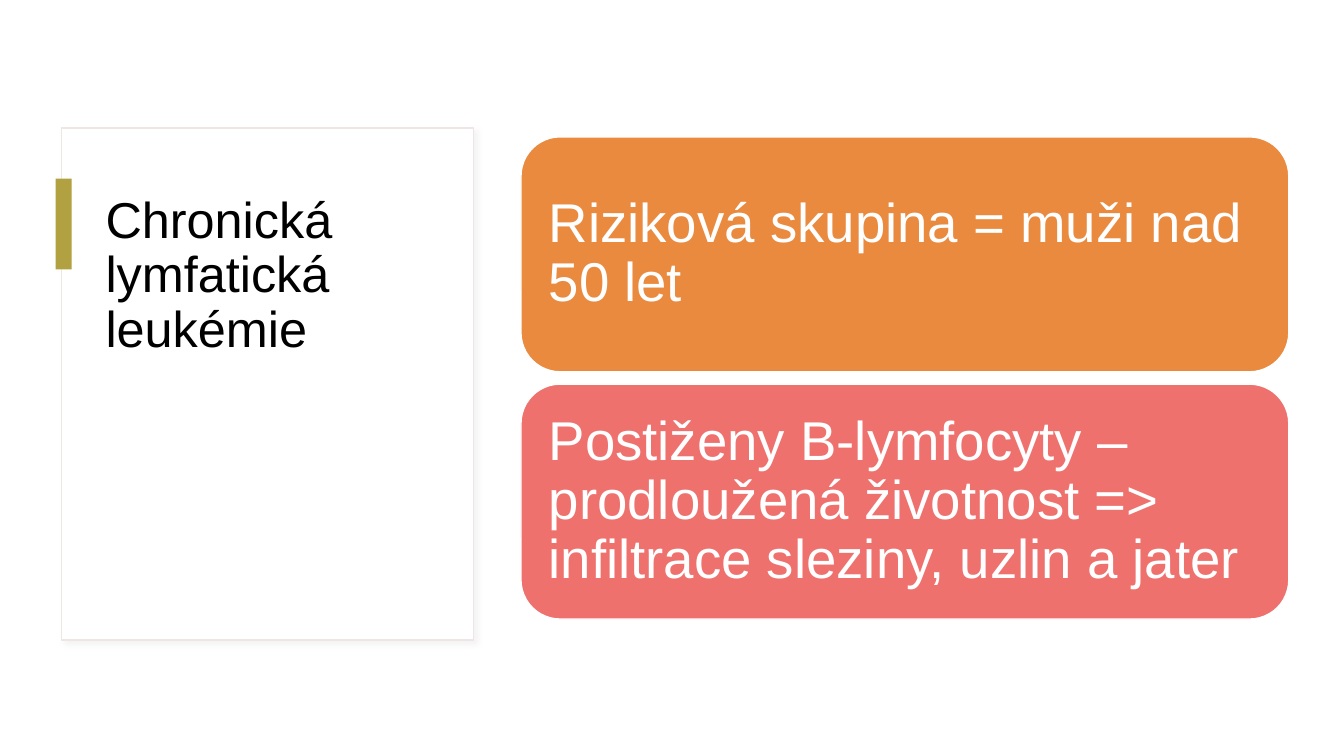
from lxml.etree import SubElement
from pptx import Presentation
from pptx.dml.color import RGBColor
from pptx.enum.shapes import MSO_SHAPE
from pptx.enum.text import MSO_ANCHOR, PP_ALIGN
from pptx.oxml.ns import qn
from pptx.util import Cm, Pt

# Content
TITLE = "Chronická lymfatická leukémie"
CARDS = [
    ("Riziková skupina = muži nad 50 let", "E98A3F"),
    ("Postiženy B-lymfocyty – prodloužená životnost => "
     "infiltrace sleziny, uzlin a jater", "EE716E"),
]

# Layout in centimetres: left, top, width, height
PANEL = (1.55, 3.23, 10.39, 12.9)
HEAD = (2.41, 4.78, 8.61, 9.78)
ACCENT = (1.4, 4.5, 0.41, 2.29)
CARD = (13.13, 3.45, 19.35, 5.92)
GAP = 0.31
PAD = 0.41


def color(code):
    return RGBColor.from_string(code)


def draw(slide, kind, box, fill, line=None):
    shape = slide.shapes.add_shape(kind, *map(Cm, box))
    shape.shadow.inherit = False
    shape.fill.solid()
    shape.fill.fore_color.rgb = color(fill)
    if line:
        shape.line.color.rgb = color(line)
        shape.line.width = Pt(1)
    else:
        shape.line.fill.background()
    return shape


def write(shape, text, size, ink, anchor):
    frame = shape.text_frame
    frame.word_wrap = True
    frame.vertical_anchor = anchor
    para = frame.paragraphs[0]
    para.alignment = PP_ALIGN.LEFT
    para.line_spacing = 0.9
    run = para.add_run()
    run.text = text
    run.font.name = "Arial"
    run.font.size = Pt(size)
    run.font.color.rgb = color(ink)
    return frame


def shade(shape):
    effects = shape.shadow._element.find(qn("a:effectLst"))
    outer = SubElement(effects, qn("a:outerShdw"), blurRad=str(Pt(4)),
                       dist=str(Pt(3)), dir="2700000", algn="tl",
                       rotWithShape="0")
    tint = SubElement(outer, qn("a:srgbClr"), val="D9D9D9")
    SubElement(tint, qn("a:alpha"), val="30000")


def main():
    deck = Presentation()
    deck.slide_width, deck.slide_height = Cm(33.87), Cm(19.05)
    slide = deck.slides.add_slide(deck.slide_layouts[6])

    # Title panel with its accent bar
    panel = draw(slide, MSO_SHAPE.RECTANGLE, PANEL, "FFFFFF", "F0E5E5")
    shade(panel)
    head = slide.shapes.add_textbox(*map(Cm, HEAD))
    write(head, TITLE, 36, "000000", MSO_ANCHOR.TOP)
    draw(slide, MSO_SHAPE.RECTANGLE, ACCENT, "B1A141")

    # Stacked cards
    left, top, width, height = CARD
    for row, (text, fill) in enumerate(CARDS):
        box = (left, top + row * (height + GAP), width, height)
        card = draw(slide, MSO_SHAPE.ROUNDED_RECTANGLE, box, fill, "FFFFFF")
        frame = write(card, text, 39, "FFFFFF", MSO_ANCHOR.MIDDLE)
        frame.margin_left = frame.margin_right = Cm(PAD)
        frame.margin_top = frame.margin_bottom = Cm(PAD)

    deck.save("out.pptx")


if __name__ == "__main__":
    main()
